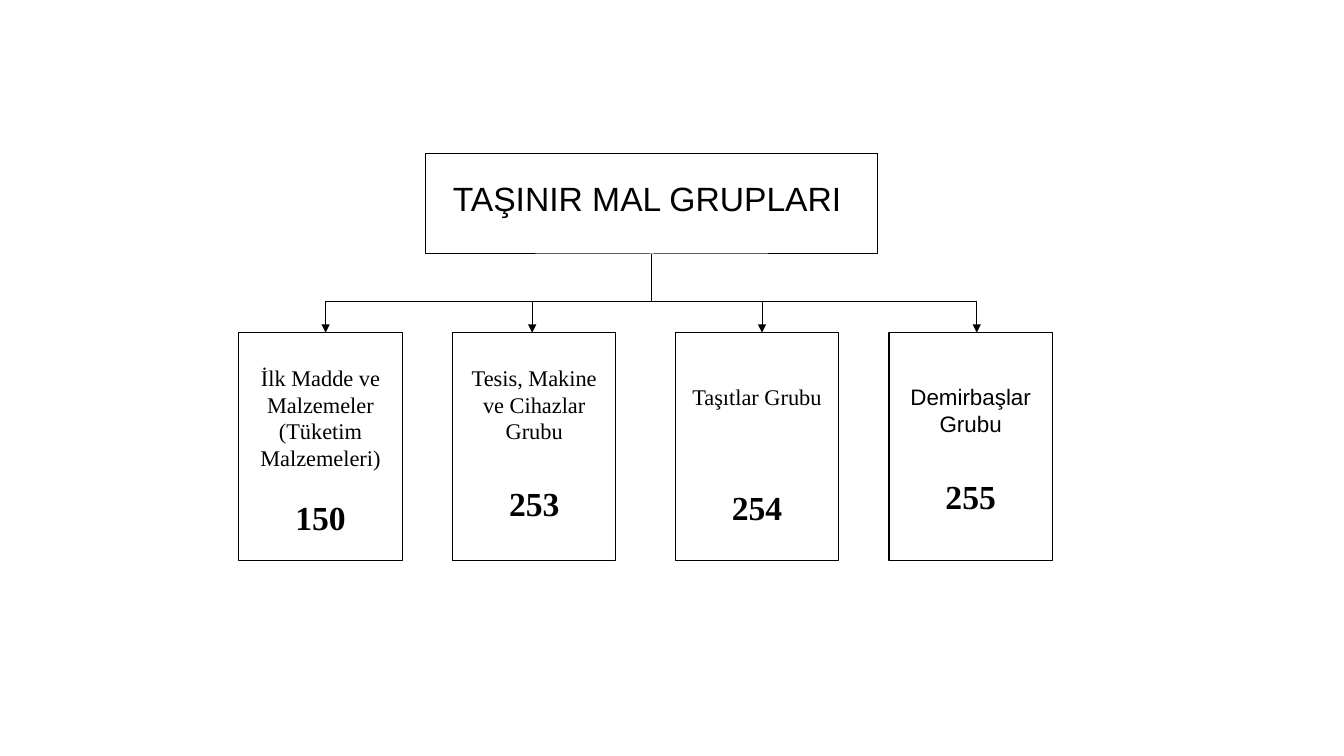
from lxml import etree
from pptx import Presentation
from pptx import util as u
from pptx.enum import shapes, text
from pptx.dml.color import RGBColor
from pptx.oxml.ns import qn

HUES = {"ink": "000000", "paper": "FFFFFF"}
SANS, SERIF = "Arial", "Times New Roman"
COLS, ROWS = 160, 90

# left column, arrow column, label, label font, top inset (in), code, gap above code (pt)
GROUPS = [
    (28.44, 38.76, "İlk Madde ve Malzemeler (Tüketim Malzemeleri)", SERIF, 0.31, "150", 18.4),
    (53.88, 63.36, "Tesis, Makine ve Cihazlar Grubu", SERIF, 0.31, "253", 27.6),
    (80.4, 90.72, "Taşıtlar Grubu", SERIF, 0.5, "254", 55.2),
    (105.84, 116.28, "Demirbaşlar Grubu", SANS, 0.5, "255", 27.6),
]
BAR, TOP = 35.88, 39.6


def write(par, words, font=SERIF, size=16, bold=False, gap=0):
    par.alignment = text.PP_ALIGN.CENTER
    par.space_before = u.Pt(gap)
    run = par.add_run()
    run.text = words
    run.font.name, run.font.size, run.font.bold = font, u.Pt(size), bold
    run.font.color.rgb = RGBColor.from_string(HUES["ink"])


class Chart:
    def __init__(self, deck):
        self.slide = deck.slides.add_slide(deck.slide_layouts[5])
        self.cell = deck.slide_width / COLS, deck.slide_height / ROWS

    def grid(self, *spots):
        """Turn alternating columns and rows into slide lengths."""
        return [u.Emu(round(n * self.cell[i % 2])) for i, n in enumerate(spots)]

    def style(self, shape, inset, right=0.1):
        shape.fill.solid()
        shape.fill.fore_color.rgb = RGBColor.from_string(HUES["paper"])
        self.ink(shape.line)
        frame = shape.text_frame
        frame.word_wrap = True
        frame.auto_size = text.MSO_AUTO_SIZE.NONE
        frame.vertical_anchor = text.MSO_ANCHOR.TOP
        frame.margin_top, frame.margin_right = u.Inches(inset), u.Inches(right)
        return frame

    def ink(self, line):
        line.color.rgb = RGBColor.from_string(HUES["ink"])
        line.width = u.Pt(0.75)

    def title(self, words, *spots):
        head = self.slide.shapes.title
        head.left, head.top, head.width, head.height = self.grid(*spots)
        frame = self.style(head, 0.24, right=0.19)
        write(frame.paragraphs[0], words, font=SANS, size=24)

    def box(self, left, label, font, inset, code, gap):
        shape = self.slide.shapes.add_shape(
            shapes.MSO_SHAPE.RECTANGLE, *self.grid(left, TOP, 19.44, 27.12))
        shape.shadow.inherit = False
        frame = self.style(shape, inset)
        write(frame.paragraphs[0], label, font=font)
        write(frame.add_paragraph(), code, size=24, bold=True, gap=gap)

    def link(self, *spots, arrow=False):
        wire = self.slide.shapes.add_connector(
            shapes.MSO_CONNECTOR.STRAIGHT, *self.grid(*spots))
        self.ink(wire.line)
        props = wire.line._get_or_add_ln()
        if arrow:
            etree.SubElement(props, qn("a:tailEnd"), type="triangle")
        etree.SubElement(props.getparent(), qn("a:effectLst"))


def main():
    deck = Presentation()
    deck.slide_width, deck.slide_height = u.Inches(13.33), u.Inches(7.5)
    chart = Chart(deck)
    chart.title("TAŞINIR MAL GRUPLARI", 50.64, 18.24, 53.88, 12)
    for left, stem, *rest in GROUPS:
        chart.box(left, *rest)
        chart.link(stem, BAR, stem, TOP, arrow=True)
    chart.link(GROUPS[0][1], BAR, GROUPS[-1][1], BAR)
    chart.link(77.52, 30.24, 77.52, BAR)
    deck.save("out.pptx")


if __name__ == "__main__":
    main()
